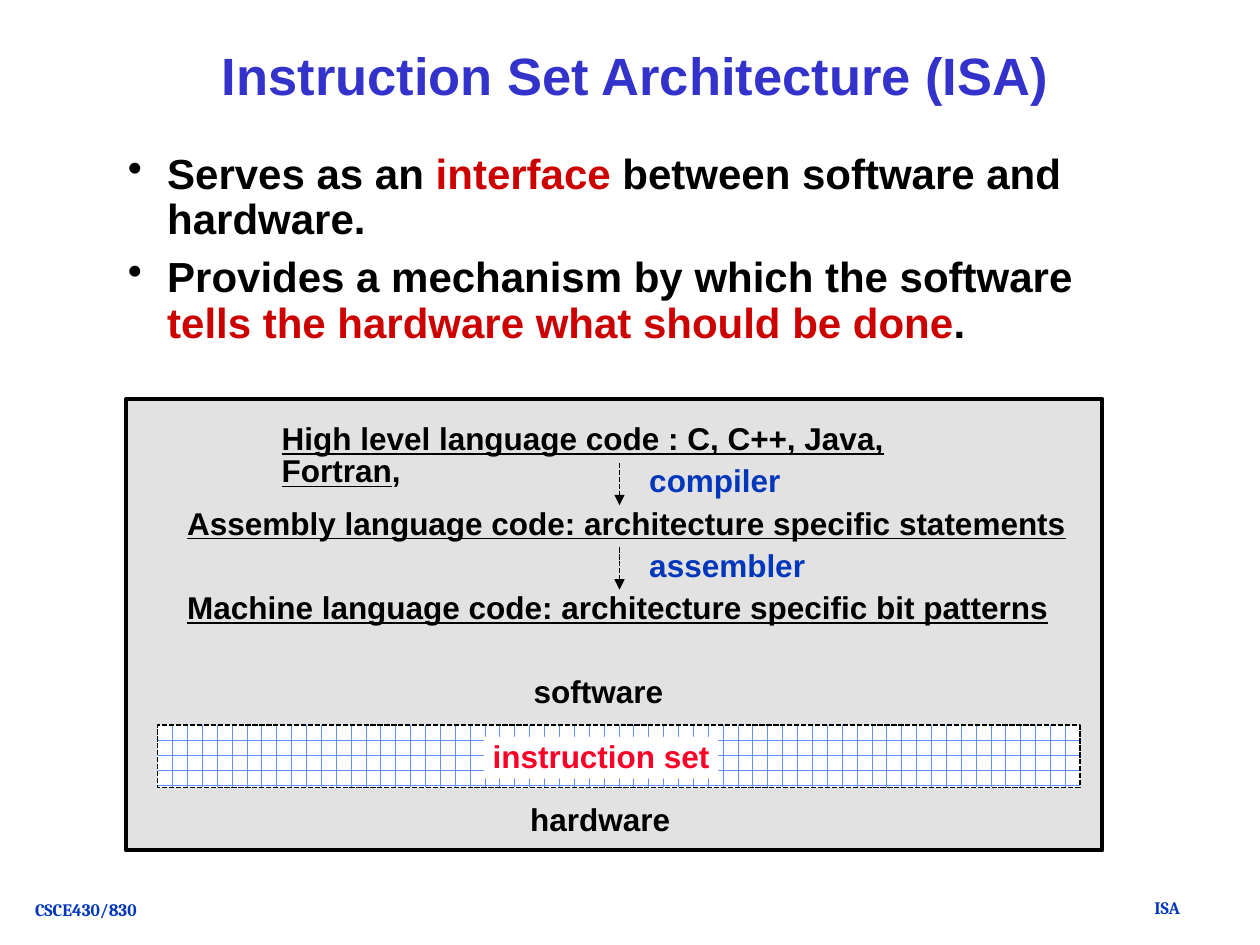
from dataclasses import dataclass

from lxml import etree
from pptx import Presentation
from pptx.dml.color import RGBColor
from pptx.enum.dml import MSO_LINE, MSO_PATTERN
from pptx.enum.shapes import MSO_CONNECTOR, MSO_SHAPE
from pptx.enum.text import MSO_ANCHOR, PP_ALIGN
from pptx.oxml.ns import qn
from pptx.util import Pt

LEFT, CENTER = PP_ALIGN.LEFT, PP_ALIGN.CENTER
TOP, MIDDLE = MSO_ANCHOR.TOP, MSO_ANCHOR.MIDDLE
RECTANGLE, STRAIGHT = MSO_SHAPE.RECTANGLE, MSO_CONNECTOR.STRAIGHT
DOTTED, BRICK = MSO_LINE.SQUARE_DOT, MSO_PATTERN.HORIZONTAL_BRICK


@dataclass(frozen=True)
class Theme:
    """Colours, fonts and type sizes of the slide."""
    black: str = "000000"
    white: str = "FFFFFF"
    title: str = "3333CC"
    emphasis: str = "CC0000"
    blue: str = "0237BC"
    panel: str = "E2E2E2"
    brick: str = "618FFD"
    red: str = "FC0128"
    font: str = "Arial"
    footer_font: str = "Cambria"
    title_size: int = 30
    body_size: int = 24
    label_size: int = 18
    footer_size: int = 10


THEME = Theme()


def rgb(code):
    """Turn a hex code into a colour."""
    return RGBColor.from_string(code)


def add_span(para, text, size, color=THEME.black, font=THEME.font, underline=False):
    """Append one bold run to a paragraph."""
    span = para.add_run()
    span.text = text
    span.font.size = Pt(size)
    span.font.name = font
    span.font.bold = True
    span.font.underline = underline
    span.font.color.rgb = rgb(color)


def prepare_frame(shape, wrap=False, anchor=TOP, insets=(7.2, 3.6)):
    """Set wrapping, anchor and insets, and return the text frame."""
    frame = shape.text_frame
    frame.word_wrap = wrap
    frame.vertical_anchor = anchor
    frame.margin_left = frame.margin_right = Pt(insets[0])
    frame.margin_top = frame.margin_bottom = Pt(insets[1])
    return frame


def add_box(page, box):
    """Add an empty text box."""
    return page.shapes.add_textbox(*map(Pt, box))


def add_rectangle(page, box, color=None):
    """Add a rectangle without shadow, outlined in black."""
    shape = page.shapes.add_shape(RECTANGLE, *map(Pt, box))
    shape.shadow.inherit = False
    shape.line.color.rgb = rgb(THEME.black)
    if color:
        shape.fill.solid()
        shape.fill.fore_color.rgb = rgb(color)
    return shape


def write_label(shape, spans, spacing=0.85, wrap=False):
    """Write a diagram label from (text, colour, underline) spans."""
    para = prepare_frame(shape, wrap, insets=(5, 2.4)).paragraphs[0]
    para.alignment = LEFT
    para.line_spacing = spacing
    for text, color, underline in spans:
        add_span(para, text, THEME.label_size, color, underline=underline)


def add_footer(page, box, text):
    """Place one footer text."""
    para = prepare_frame(add_box(page, box)).paragraphs[0]
    para.alignment = CENTER
    add_span(para, text, THEME.footer_size, THEME.blue, THEME.footer_font)


def add_title(page, box, text):
    """Place the slide title."""
    para = prepare_frame(add_box(page, box), True, MIDDLE).paragraphs[0]
    para.alignment = CENTER
    para.line_spacing = 0.9
    add_span(para, text, THEME.title_size, THEME.title)


def add_bullets(page, box, items):
    """Place the bulleted statements, each a list of (text, colour) spans."""
    frame = prepare_frame(add_box(page, box), True)
    for index, spans in enumerate(items):
        para = frame.add_paragraph() if index else frame.paragraphs[0]
        para.line_spacing = 0.9
        para.space_before = Pt(0.3 * THEME.body_size)
        properties = para._p.get_or_add_pPr()
        properties.set("marL", str(Pt(22.5)))
        properties.set("indent", str(-Pt(22.5)))
        etree.SubElement(properties, qn("a:buChar"), char="•")
        for text, color in spans:
            add_span(para, text, THEME.body_size, color)


def add_arrow(page, x, top, bottom):
    """Draw a dotted arrow pointing down."""
    arrow = page.shapes.add_connector(STRAIGHT, Pt(x), Pt(top), Pt(x), Pt(bottom))
    arrow.line.color.rgb = rgb(THEME.black)
    arrow.line.width = Pt(1)
    arrow.line.dash_style = DOTTED
    etree.SubElement(arrow.line._get_or_add_ln(), qn("a:tailEnd"), type="triangle")
    etree.SubElement(arrow._element.spPr, qn("a:effectLst"))


def add_instruction_bar(page, box):
    """Place the brick band with its centre label."""
    left, top, width, height = box
    band = add_rectangle(page, box)
    band.fill.patterned()
    band.fill.pattern = BRICK
    band.fill.fore_color.rgb = rgb(THEME.brick)
    band.fill.back_color.rgb = rgb(THEME.white)
    band.line.width = Pt(1)
    band.line.dash_style = DOTTED
    plate = add_rectangle(page, (left + 186.5, top + 6.5, 134, 24), THEME.white)
    plate.line.fill.background()
    write_label(plate, [("instruction set", THEME.red, False)], 0.92)


def add_diagram(page, box):
    """Place the path from high level code down to the hardware."""
    left, top, width, height = box
    add_rectangle(page, box, THEME.panel).line.width = Pt(2.25)
    add_instruction_bar(page, (left + 18, top + 186.5, width - 31, 35.5))

    step = 24.1
    rows = [top + 12.5 + step * number for number in range(7)]
    high_level = [("High level language code : C, C++, Java, Fortran", THEME.black, True),
                  (",", THEME.black, False)]
    write_label(add_box(page, (left + 84, rows[0], 418, 22)), high_level, wrap=True)

    labels = [
        ("compiler", 294, rows[1], 85, THEME.blue, False),
        ("Assembly language code: architecture specific statements",
         30, rows[2], 517, THEME.black, True),
        ("assembler", 294, rows[3], 99, THEME.blue, False),
        ("Machine language code: architecture specific bit patterns",
         30, rows[4], 507, THEME.black, True),
        ("software", 228, rows[6], 84, THEME.black, False),
        ("hardware", 226, top + 230, 90, THEME.black, False),
    ]
    for text, offset, y, span_width, color, underline in labels:
        shape = add_box(page, (left + offset, y, span_width, 22))
        write_label(shape, [(text, color, underline)])
    for row in (1, 3):
        add_arrow(page, left + 282, rows[row], rows[row + 1])


def main():
    """Build the slide and save it."""
    deck = Presentation()
    deck.slide_width, deck.slide_height = Pt(720), Pt(540)
    page = deck.slides.add_slide(deck.slide_layouts[6])
    add_footer(page, (651, 509, 32, 19), "ISA")
    add_footer(page, (12, 510, 74, 19), "CSCE430/830")
    add_title(page, (66, 30, 594, 30), "Instruction Set Architecture (ISA)")
    add_bullets(page, (66, 84, 582, 138), [
        [("Serves as an ", THEME.black), ("interface", THEME.emphasis),
         (" between software and hardware.", THEME.black)],
        [("Provides a mechanism by which the software ", THEME.black),
         ("tells the hardware what should be done", THEME.emphasis),
         (".", THEME.black)],
    ])
    add_diagram(page, (72, 228, 558, 258))
    deck.save("out.pptx")


if __name__ == "__main__":
    main()
